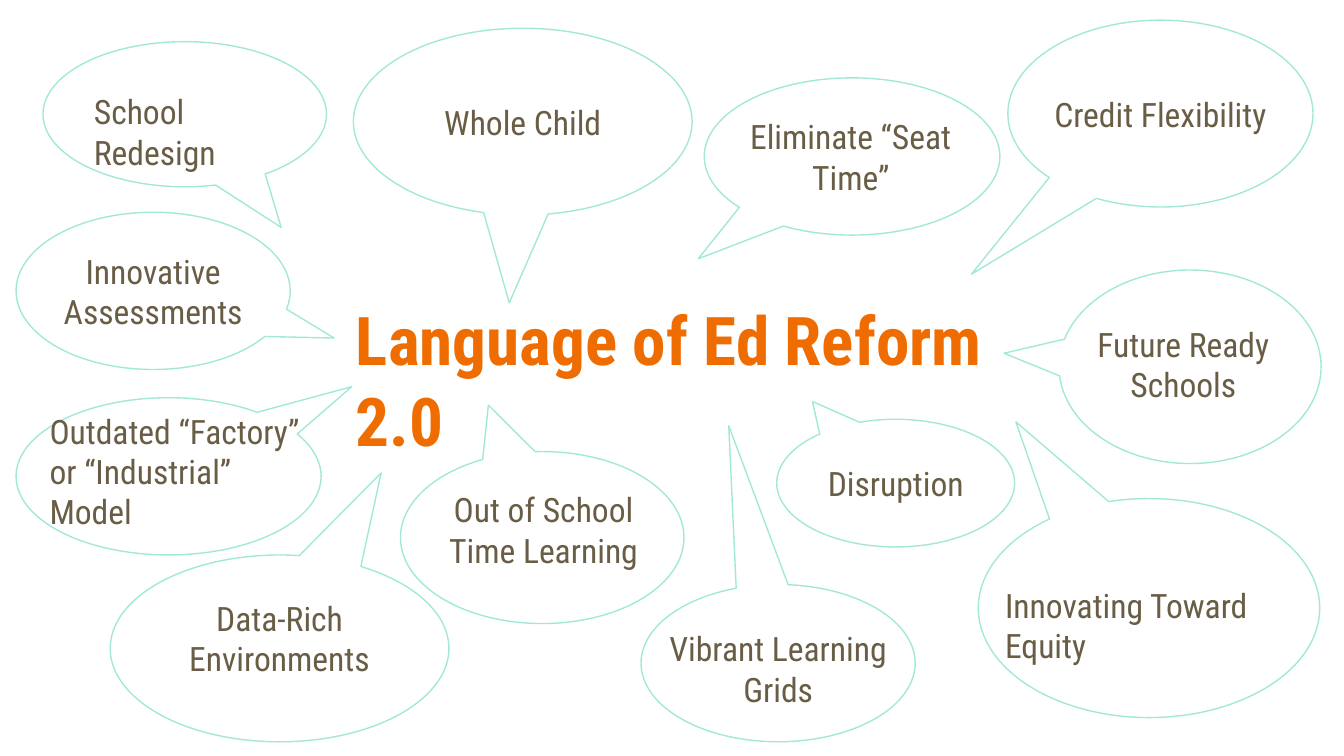
from dataclasses import dataclass

from pptx import Presentation
from pptx.dml.color import RGBColor
from pptx.enum.shapes import MSO_SHAPE as Shape
from pptx.enum.text import MSO_ANCHOR as Anchor, PP_ALIGN as Align
from pptx.util import Inches, Pt

FONT = "Roboto Condensed"
COLOURS = {"title": "EF6C00", "label": "695D46", "outline": "A1E8D9", "paper": "FFFFFF"}


@dataclass
class Bubble:
    """A callout: its box, tail tip, label size and the label's shift from the centre."""
    text: str
    box: tuple
    tail: tuple
    label: tuple = (1.95, 0.65)
    shift: tuple = (0, 0)
    align: Align = Align.CENTER
    anchor: Anchor = Anchor.MIDDLE
    filled: bool = True


BUBBLES = [
    Bubble("School Redesign", (0.32, 0.31, 2.11, 1.08), (0.34, 0.78),
           (1.69, 0.44), (0.07, -0.05), Align.LEFT, Anchor.TOP),
    Bubble("Whole Child", (2.63, 0.21, 2.52, 1.39), (-0.04, 0.97)),
    Bubble("Innovative Assessments", (0.12, 1.58, 2.04, 1.17), (0.66, 0.3), (1.95, 0.83)),
    Bubble("Data-Rich Environments", (0.82, 4.13, 2.52, 1.39), (0.3, -0.94),
           shift=(0, -0.08)),
    Bubble("Out of School Time Learning", (2.98, 3.36, 2.11, 1.28), (-0.19, -0.77),
           shift=(0.01, -0.06)),
    Bubble("Credit Flexibility", (7.5, 0.15, 2.27, 1.39), (-0.62, 0.86)),
    Bubble("Future Ready Schools", (7.88, 2.01, 1.95, 1.44), (-0.71, -0.07),
           (1.95, 1.08), (-0.05, -0.02)),
    Bubble("Vibrant Learning Grids", (4.77, 4.35, 2.04, 1.17), (-0.18, -1.51),
           (1.95, 0.83), (0, 0.04)),
    Bubble("Eliminate “Seat Time”", (5.24, 0.58, 2.2, 1.17), (-0.52, 0.65),
           (2.11, 0.65), (-0.01, 0)),
    Bubble("Disruption", (5.78, 3.12, 1.77, 0.95), (-0.35, -0.64)),
    Bubble("Outdated “Factory” or “Industrial” Model", (0.12, 2.96, 2.27, 1.17),
           (0.6, -0.57), (2.11, 0.65), (0.07, -0.04), Align.LEFT),
    Bubble("Innovating Toward Equity", (7.28, 3.71, 2.54, 1.63), (-0.39, -0.85),
           (2.52, 0.65), (0.09, 0.05), Align.LEFT, Anchor.TOP, filled=False),
]


def colour(name):
    """Return the named palette colour."""
    return RGBColor.from_string(COLOURS[name])


def add_text(page, text, box, size=18, ink="label", bold=False,
             align=Align.LEFT, anchor=Anchor.TOP):
    """Place one formatted paragraph in a wrapping text box."""
    frame = page.shapes.add_textbox(*map(Inches, box)).text_frame
    frame.word_wrap = True
    frame.vertical_anchor = anchor
    frame.margin_left = frame.margin_right = Inches(0.1)
    frame.margin_top = frame.margin_bottom = Inches(0.1)
    para = frame.paragraphs[0]
    para.alignment = align
    span = para.add_run()
    span.text = text
    span.font.name = FONT
    span.font.size = Pt(size)
    span.font.bold = bold
    span.font.color.rgb = colour(ink)


def add_bubble(page, bubble):
    """Draw a speech bubble and its label, centred in it apart from the shift."""
    left, top, width, height = bubble.box
    callout = page.shapes.add_shape(Shape.OVAL_CALLOUT, *map(Inches, bubble.box))
    callout.shadow.inherit = False
    callout.adjustments[0], callout.adjustments[1] = bubble.tail
    if bubble.filled:
        callout.fill.solid()
        callout.fill.fore_color.rgb = colour("paper")
    else:
        callout.fill.background()
    callout.line.color.rgb = colour("outline")
    callout.line.width = Pt(0.75)

    label_width, label_height = bubble.label
    label_left = left + (width - label_width) / 2 + bubble.shift[0]
    label_top = top + (height - label_height) / 2 + bubble.shift[1]
    add_text(page, bubble.text, (label_left, label_top, label_width, label_height),
             align=bubble.align, anchor=bubble.anchor)


def main():
    """Build the slide and save it."""
    deck = Presentation()
    deck.slide_width, deck.slide_height = Inches(10), Inches(10 * 9 / 16)
    page = deck.slides.add_slide(deck.slide_layouts[6])
    page.background.fill.solid()
    page.background.fill.fore_color.rgb = colour("paper")
    add_text(page, "Language of Ed Reform 2.0", (2.55, 2.12, 5.29, 1.33),
             size=36, ink="title", bold=True)
    for bubble in BUBBLES:
        add_bubble(page, bubble)
    deck.save("out.pptx")


if __name__ == "__main__":
    main()
